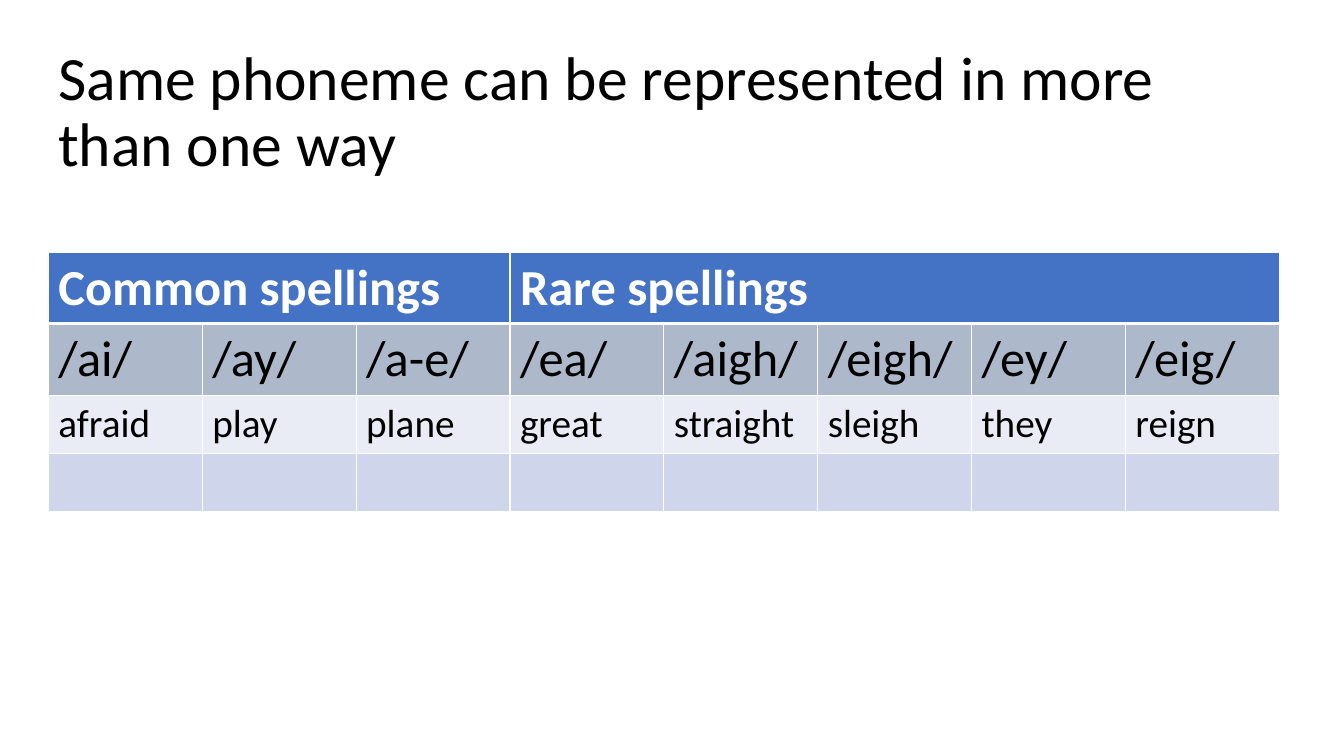
from lxml.etree import SubElement
from pptx import Presentation
from pptx.dml.color import RGBColor
from pptx.enum.text import MSO_ANCHOR
from pptx.oxml.ns import qn
from pptx.util import Inches, Pt


def color(code):
    return RGBColor.from_string(code)


class Deck:
    font = "Calibri"
    white = "FFFFFF"
    black = "000000"

    def __init__(self, wide, high):
        self.show = Presentation()
        self.show.slide_width = Inches(wide)
        self.show.slide_height = Inches(high)
        self.slide = self.show.slides.add_slide(self.show.slide_layouts[6])

    def style(self, frame, size, tint, bold=False):
        for para in frame.paragraphs:
            for run in para.runs:
                run.font.name = self.font
                run.font.size = Pt(size)
                run.font.bold = bold
                run.font.color.rgb = color(tint)

    def title(self, text, left, top, width, height):
        box = self.slide.shapes.add_textbox(
            Inches(left), Inches(top), Inches(width), Inches(height))
        frame = box.text_frame
        frame.word_wrap = True
        frame.vertical_anchor = MSO_ANCHOR.MIDDLE
        frame.text = text
        frame.paragraphs[0].line_spacing = 0.9
        self.style(frame, 44, self.black)

    def border(self, cell, side, width):
        props = cell._tc.get_or_add_tcPr()
        line = SubElement(props, qn("a:ln" + side), w=str(Pt(width)))
        fill = SubElement(line, qn("a:solidFill"))
        SubElement(fill, qn("a:srgbClr"), val=self.white)

    def table(self, rows, looks, spans, left, top, width):
        count = len(rows[0])
        high = sum(look[0] for look in looks)
        grid = self.slide.shapes.add_table(
            len(rows), count, Inches(left), Inches(top),
            Inches(width), Inches(high)).table
        for column in grid.columns:
            column.width = Inches(width / count)
        for i, (words, look) in enumerate(zip(rows, looks)):
            height, fill, size, tint, bold = look
            grid.rows[i].height = Inches(height)
            for j, word in enumerate(words):
                cell = grid.cell(i, j)
                for side in "LRTB":
                    thick = (i, side) in ((0, "B"), (1, "T"))
                    self.border(cell, side, 3 if thick else 1)
                cell.fill.solid()
                cell.fill.fore_color.rgb = color(fill)
                cell.text_frame.text = word
                self.style(cell.text_frame, size, tint, bold)
        for first, last in spans:
            grid.cell(0, first).merge(grid.cell(0, last))


def main():
    deck = Deck(13.33, 7.5)
    deck.title("Same phoneme can be represented in more than one way",
               0.48, 0.4, 11.93, 1.45)
    rows = [
        ["Common spellings", "", "", "Rare spellings", "", "", "", ""],
        ["/ai/", "/ay/", "/a-e/", "/ea/", "/aigh/", "/eigh/", "/ey/", "/eig/"],
        ["afraid", "play", "plane", "great",
         "straight", "sleigh", "they", "reign"],
        [""] * 8,
    ]
    looks = [
        (0.71, "4472C4", 36, deck.white, True),
        (0.71, "ADB9CA", 36, deck.black, False),
        (0.58, "E9EBF5", 28, deck.black, False),
        (0.58, "CFD5EA", 28, deck.black, False),
    ]
    deck.table(rows, looks, [(0, 2), (3, 7)], 0.48, 2.5, 12.21)
    deck.show.save("out.pptx")


if __name__ == "__main__":
    main()
